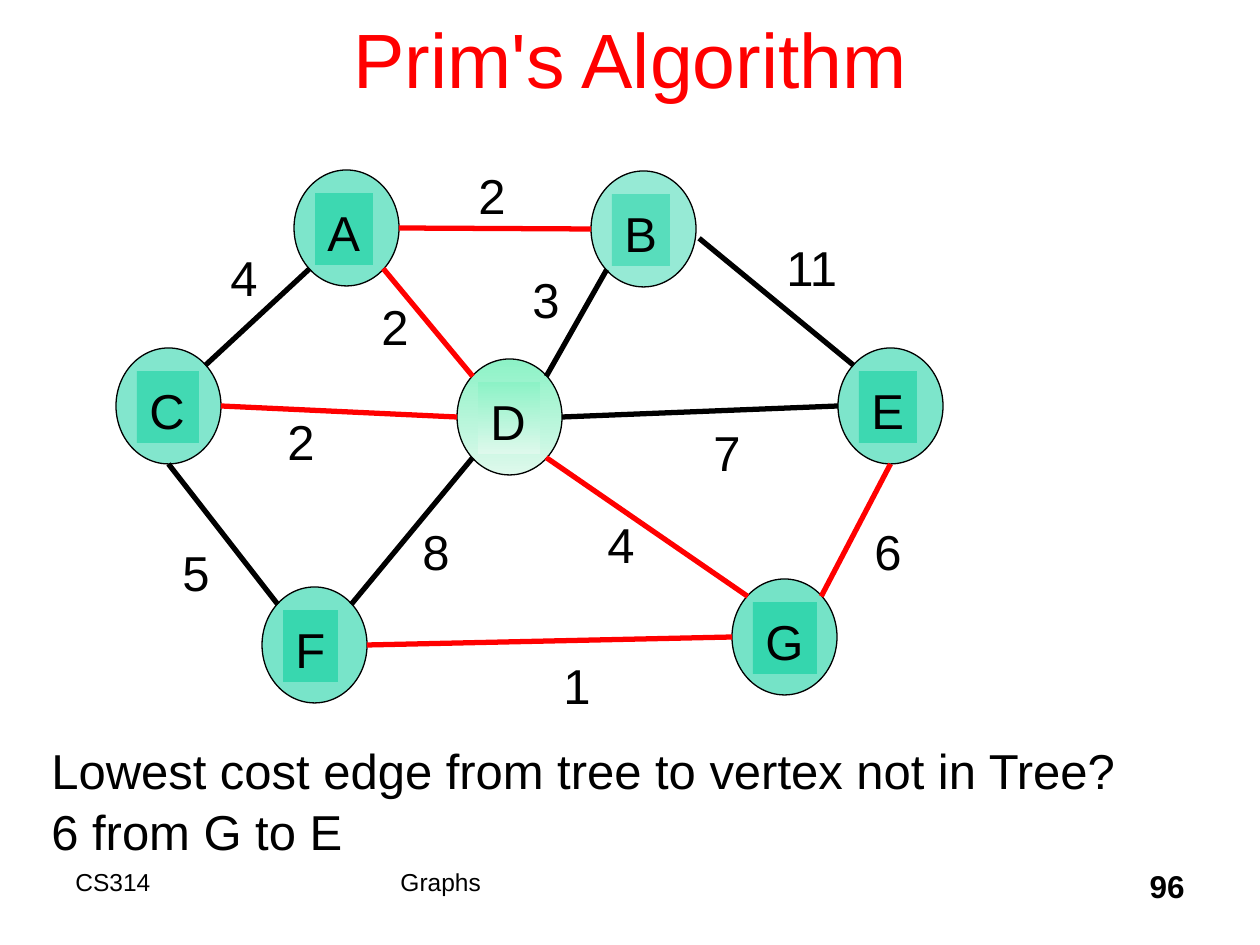
from lxml.etree import SubElement
from pptx import Presentation
from pptx.dml.color import RGBColor
from pptx.enum.shapes import MSO_CONNECTOR as Connector, MSO_SHAPE as Preset
from pptx.enum.text import MSO_ANCHOR as Anchor, PP_ALIGN as Align
from pptx.oxml.ns import qn
from pptx.util import Emu, Pt

PX = 914400 / 126
COLORS = {
    "ink": "000000", "tree": "FF0000", "node": "00CC99",
    "fade_top": "8CF2C6", "fade_bottom": "DEF9EC",
}
NODE_W, NODE_H = 105, 116
LABEL_DX, LABEL_DY, LABEL_H = 21, 23, 72
WEIGHT_W = 53
BODY = {"size": 28}
FOOTER = {"size": 14}
SITES = {
    "top_left": (0.15, 0.15), "left": (0, 0.5), "bottom_left": (0.15, 0.85),
    "bottom": (0.5, 1), "bottom_right": (0.85, 0.85), "right": (1, 0.5),
    "top_right": (0.85, 0.15), "beside_right": (1.03, 0.58),
}
# name: left, top, label width, opacity percent (None for the faded node)
NODES = {
    "A": (294, 170, 58, 51), "B": (591, 171, 58, 41), "C": (116, 348, 62, 49),
    "F": (262, 587, 55, 53), "D": (457, 359, 62, None), "E": (838, 348, 58, 51),
    "G": (732, 579, 64, 54),
}
EDGES = [
    ("A", "right", "B", "left", "tree"),
    ("B", "beside_right", "E", "top_left", "ink"),
    ("A", "bottom_left", "C", "top_right", "ink"),
    ("C", "bottom", "F", "top_left", "ink"),
    ("F", "right", "G", "left", "tree"),
    ("C", "right", "D", "left", "tree"),
    ("D", "right", "E", "left", "ink"),
    ("E", "bottom", "G", "top_right", "tree"),
    ("D", "top_right", "B", "bottom_left", "ink"),
    ("A", "bottom_right", "D", "top_left", "tree"),
    ("D", "bottom_left", "F", "top_right", "ink"),
    ("D", "bottom_right", "G", "top_left", "tree"),
]
WEIGHTS = [
    ("2", 369, 287), ("3", 520, 260), ("2", 466, 156), ("7", 701, 413),
    ("6", 862, 512), ("2", 275, 402), ("1", 551, 646), ("4", 218, 238),
    ("5", 170, 533), ("8", 410, 512), ("4", 595, 505),
]


def px(*lengths):
    """Turn pixel lengths into EMU."""
    return [Emu(round(length * PX)) for length in lengths]


def rgb(name):
    """Look up a named colour."""
    return RGBColor.from_string(COLORS[name])


def write(shape, text, font, color="ink", wrap=True, **paragraph_format):
    """Fill a shape with one formatted paragraph."""
    frame = shape.text_frame
    frame.word_wrap = wrap
    paragraph = frame.paragraphs[0]
    paragraph.text = text
    for name, value in {"alignment": Align.LEFT, **paragraph_format}.items():
        setattr(paragraph, name, value)
    for run in paragraph.runs:
        run.font.color.rgb = rgb(color)
        values = {"name": "Arial", **font, "size": Pt(font["size"])}
        for name, value in values.items():
            setattr(run.font, name, value)


def add_text(slide, box, text, font, **options):
    """Add a text box and return its frame."""
    shape = slide.shapes.add_textbox(*px(*box))
    write(shape, text, font, **options)
    return shape.text_frame


def add_body(slide, box, text, wrap=False):
    """Add text in the size of the graph labels."""
    frame = add_text(slide, box, text, BODY, wrap=wrap,
                     line_spacing=1.05, space_before=Pt(1))
    frame.vertical_anchor = Anchor.TOP


def paint(shape, opacity):
    """Fill with translucent node colour, or with the fade if no opacity is given."""
    shape.shadow.inherit = False
    if opacity is None:
        shape.fill.gradient()
        shape.fill.gradient_angle = 270
        for stop, name in zip(shape.fill.gradient_stops, ("fade_top", "fade_bottom")):
            stop.color.rgb = rgb(name)
        return
    shape.fill.solid()
    shape.fill.fore_color.rgb = rgb("node")
    color = shape._element.spPr.find(".//" + qn("a:srgbClr"))
    SubElement(color, qn("a:alpha")).set("val", str(opacity * 1000))


def add_node(slide, name, left, top, label_width, opacity):
    """Add a graph vertex: an ellipse grouped with its label."""
    shapes = slide.shapes.add_group_shape().shapes
    ellipse = shapes.add_shape(Preset.OVAL, *px(left, top, NODE_W, NODE_H))
    paint(ellipse, opacity)
    ellipse.line.color.rgb = rgb("ink")
    ellipse.line.width = Pt(0.75)
    label = shapes.add_shape(
        Preset.RECTANGLE, *px(left + LABEL_DX, top + LABEL_DY, label_width, LABEL_H))
    paint(label, opacity)
    label.line.fill.background()
    write(label, name, BODY, wrap=False, line_spacing=1.05, space_before=Pt(1))
    label.text_frame.vertical_anchor = Anchor.TOP


def site_point(node, site):
    """Find where an edge meets a node."""
    left, top = NODES[node][:2]
    across, down = SITES[site]
    return left + across * NODE_W, top + down * NODE_H


def add_edge(slide, start, start_site, end, end_site, color):
    """Add a straight edge between two nodes."""
    points = site_point(start, start_site) + site_point(end, end_site)
    edge = slide.shapes.add_connector(Connector.STRAIGHT, *px(*points))
    edge.line.color.rgb = rgb(color)
    edge.line.width = Pt(3)
    SubElement(edge._element.spPr, qn("a:effectLst"))


def main():
    """Build the slide and save it."""
    presentation = Presentation()
    presentation.slide_width, presentation.slide_height = px(1260, 945)
    slide = presentation.slides.add_slide(presentation.slide_layouts[6])
    title = add_text(slide, (95, -21, 1071, 157), "Prim's Algorithm", {"size": 44},
                     color="tree", alignment=Align.CENTER)
    title.vertical_anchor = Anchor.MIDDLE
    add_text(slide, (63, 861, 315, 63), "CS314", FOOTER)
    add_text(slide, (388, 861, 483, 63), "Graphs", FOOTER)
    add_text(slide, (935, 861, 262, 63), "96", {"size": 18, "bold": True},
             alignment=Align.RIGHT)
    for name, values in NODES.items():
        add_node(slide, name, *values)
    for text, left, top in WEIGHTS:
        add_body(slide, (left, top, WEIGHT_W, LABEL_H), text)
    add_body(slide, (774, 228, 77, LABEL_H), "11")
    add_body(slide, (39, 731, 1270, 131),
             "Lowest cost edge from tree to vertex not in Tree?\v6 from G to E", wrap=True)
    for edge in EDGES:
        add_edge(slide, *edge)
    presentation.save("out.pptx")


if __name__ == "__main__":
    main()
